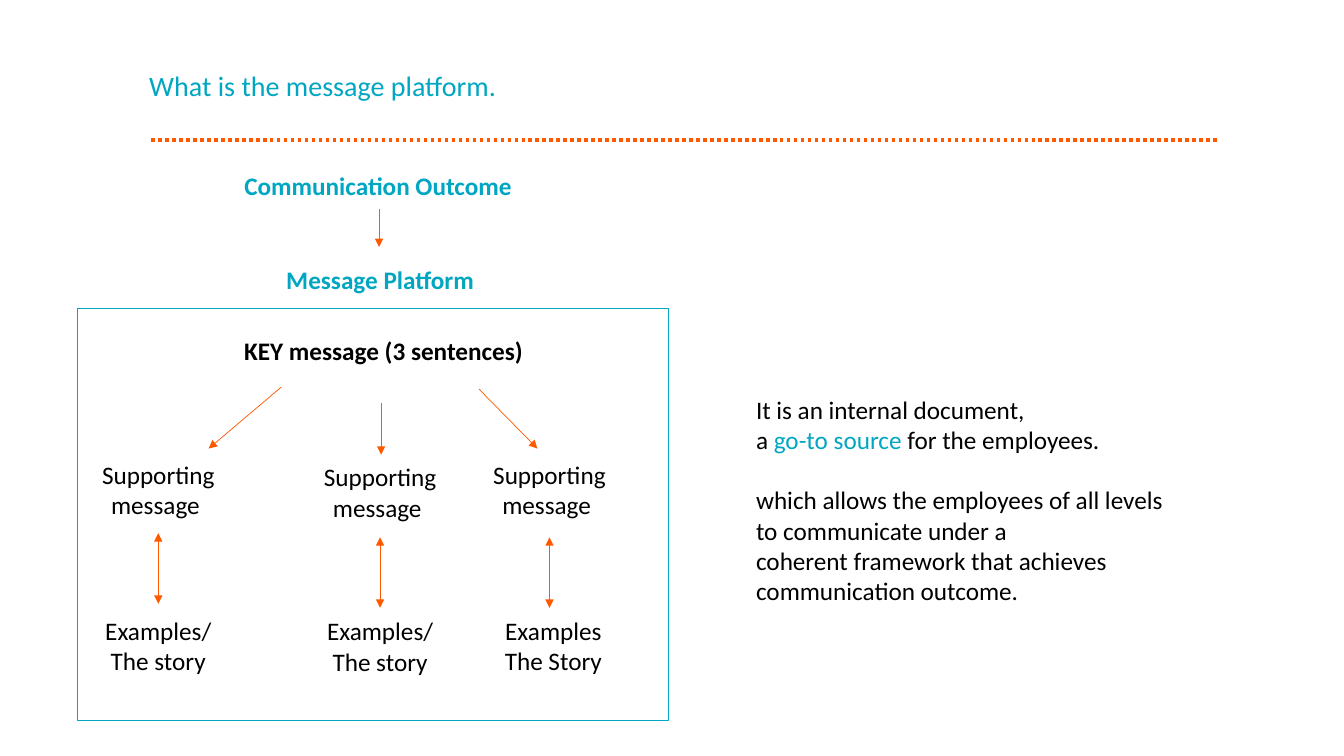
"""Build the slide that explains the message platform."""
from lxml import etree
from pptx import Presentation
from pptx.dml.color import RGBColor
from pptx.enum.dml import MSO_LINE_DASH_STYLE as Dash
from pptx.enum.shapes import MSO_CONNECTOR as Connector, MSO_SHAPE as Shape
from pptx.enum.text import MSO_ANCHOR as Anchor, PP_ALIGN as Align
from pptx.oxml.ns import qn
from pptx.util import Inches, Pt

TEAL, ORANGE, BLACK = "00A6C2", "FF5900", "000000"
FONT = "Calibri"

TITLE = "What is the message platform."
HEADINGS = [
    ("Communication Outcome", TEAL, (1.25, 1.64, 5, 0.4)),
    ("Message Platform", TEAL, (1.73, 2.57, 4.08, 0.4)),
    ("KEY message (3 sentences)", BLACK, (2.11, 3.28, 3.39, 0.4)),
]
SUPPORT = "Supporting message "
BRANCHES = [
    {"center": 1.57, "support_top": 4.51, "support_width": 1.97, "arrow_top": 5.29,
     "story": ["Examples/", "The story"], "story_top": 6.05, "story_center": 1.57},
    {"center": 3.77, "support_top": 4.53, "support_width": 1.78, "arrow_top": 5.33,
     "story": ["Examples/", "The story"], "story_top": 6.06, "story_center": 3.77},
    {"center": 5.45, "support_top": 4.51, "support_width": 1.78, "arrow_top": 5.33,
     "story": [" Examples", " The Story"], "story_top": 6.05, "story_center": 5.46},
]
STORY_WIDTH, PAIR_HEIGHT, ARROW_LENGTH = 2.12, 0.71, 0.7
DOWN_ARROWS = [
    ((3.76, 2.07), (3.76, 2.45)),
    ((2.79, 3.84), (2.07, 4.45)),
    ((3.78, 4), (3.78, 4.51)),
    ((4.75, 3.86), (5.33, 4.45)),
]
PLATFORM_FRAME = (0.77, 3.06, 5.86, 4.09)
RULE = ((1.5, 1.39), (12.09, 1.39))
EXPLANATION = [
    [("It is an internal document,", BLACK)],
    [("a ", BLACK), ("go-to source ", TEAL), ("for the employees.", BLACK)],
    [("which allows the employees of all levels", BLACK)],
    [("to communicate under a", BLACK)],
    [("coherent framework that achieves", BLACK)],
    [("communication outcome.", BLACK)],
]
EXPLANATION_BOX = (7.4, 3.56, 5.75, 2.83)
LINE_GAP = 0.3


def color(hex_code):
    return RGBColor.from_string(hex_code)


def add_run(paragraph, text, hex_code, size=18, bold=False):
    run = paragraph.add_run()
    run.text = text
    run.font.name, run.font.size, run.font.bold = FONT, Pt(size), bold
    run.font.color.rgb = color(hex_code)


def add_text(slide, box, lines, align=Align.CENTER, bold=False):
    frame = slide.shapes.add_textbox(*map(Inches, box)).text_frame
    frame.word_wrap = True
    for index, line in enumerate(lines):
        paragraph = frame.add_paragraph() if index else frame.paragraphs[0]
        paragraph.alignment = align
        for text, hex_code in line:
            add_run(paragraph, text, hex_code, bold=bold)
    return frame


def add_line(slide, start, end, width=0.5, heads=()):
    line = slide.shapes.add_connector(Connector.STRAIGHT, *map(Inches, start + end))
    line.line.color.rgb = color(ORANGE)
    line.line.width = Pt(width)
    outline = line.line._get_or_add_ln()
    for head in heads:
        etree.SubElement(outline, qn(f"a:{head}"), type="triangle")
    etree.SubElement(line._element.spPr, qn("a:effectLst"))
    return line


def add_title(slide):
    title = slide.shapes.title
    title.left, title.top, title.width, title.height = map(Inches, (1.38, 0.58, 7.31, 0.58))
    title.text_frame.vertical_anchor = Anchor.MIDDLE
    paragraph = title.text_frame.paragraphs[0]
    paragraph.alignment = Align.LEFT
    paragraph.line_spacing = 0.9
    add_run(paragraph, TITLE, TEAL, size=20)


def add_branch(slide, branch):
    center, width = branch["center"], branch["support_width"]
    add_text(slide, (center - width / 2, branch["support_top"], width, PAIR_HEIGHT),
             [[(SUPPORT, BLACK)]])
    story_left = branch["story_center"] - STORY_WIDTH / 2
    add_text(slide, (story_left, branch["story_top"], STORY_WIDTH, PAIR_HEIGHT),
             [[(text, BLACK)] for text in branch["story"]])
    top = branch["arrow_top"]
    add_line(slide, (center, top), (center, top + ARROW_LENGTH), heads=("headEnd", "tailEnd"))


def main():
    deck = Presentation()
    deck.slide_width, deck.slide_height = Inches(13.33), Inches(7.5)
    slide = deck.slides.add_slide(deck.slide_layouts[5])
    add_title(slide)

    explanation = add_text(slide, EXPLANATION_BOX, EXPLANATION, align=Align.LEFT)
    explanation.margin_top = Inches(0.05 + LINE_GAP)
    explanation.paragraphs[2].space_before = Inches(LINE_GAP)

    for text, hex_code, box in HEADINGS:
        add_text(slide, box, [[(text, hex_code)]], bold=True)
    for branch in BRANCHES:
        add_branch(slide, branch)
    for start, end in DOWN_ARROWS:
        add_line(slide, start, end, heads=("tailEnd",))

    frame = slide.shapes.add_shape(Shape.RECTANGLE, *map(Inches, PLATFORM_FRAME))
    frame.shadow.inherit = False
    frame.fill.background()
    frame.line.color.rgb = color(TEAL)
    frame.line.width = Pt(1)

    add_line(slide, *RULE, width=2.5).line.dash_style = Dash.ROUND_DOT
    deck.save("out.pptx")


if __name__ == "__main__":
    main()
